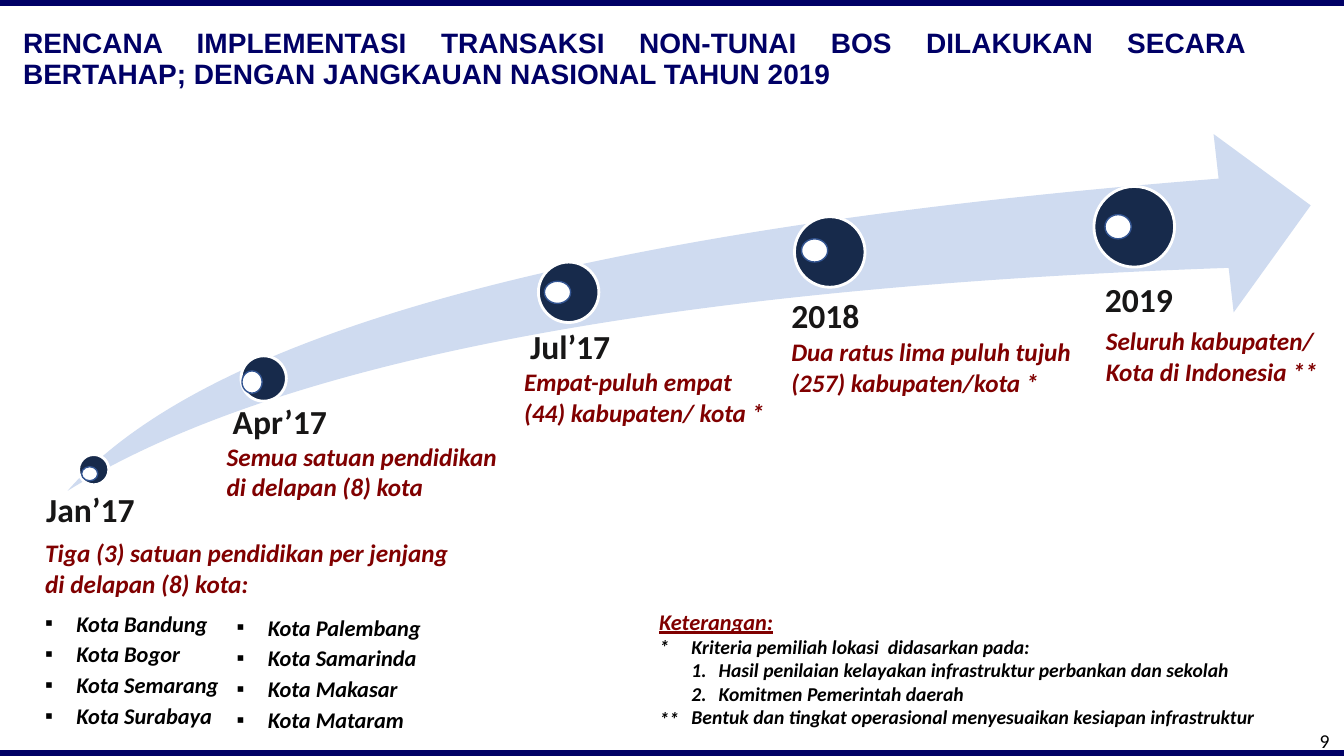
from dataclasses import dataclass, replace
from typing import Optional

from lxml.etree import SubElement
from pptx import Presentation
from pptx.dml.color import RGBColor
from pptx.enum.shapes import MSO_SHAPE as Shape
from pptx.enum.text import MSO_ANCHOR as Anchor, PP_ALIGN as Align
from pptx.oxml.ns import qn
from pptx.util import Inches, Pt

COLORS = {
    "navy": "000066",
    "arrow": "CFDBF0",
    "dot": "172A4B",
    "glint_line": "325491",
    "date": "171616",
    "maroon": "800000",
    "black": "000000",
    "white": "FFFFFF",
}

Box = tuple[float, float, float, float]  # left, top, width, height


@dataclass(frozen=True)
class Style:
    size: float
    color: str
    bold: bool = True
    italic: bool = False
    underline: bool = False
    font: str = "Calibri"
    align: Align = Align.LEFT
    spacing: Optional[float | Pt] = None
    before: float = 0
    margin: float = 0
    hanging: float = 0
    bullet: str = ""
    numbering: str = ""


@dataclass(frozen=True)
class Line:
    text: str
    style: Style


@dataclass(frozen=True)
class Milestone:
    date: str
    date_box: Box
    dot: Box
    glint: Box
    caption: tuple[str, ...]
    caption_box: Box
    cities: tuple[str, ...] = ()


TITLE = Style(20, "navy", font="Arial", align=Align.JUSTIFY, spacing=0.9)
PAGE = Style(14, "black", bold=False)
DATE = Style(24, "date")
CAPTION = Style(18, "maroon", italic=True, spacing=Pt(22))
CITY = Style(16, "black", italic=True, spacing=Pt(22),
             margin=0.31, hanging=0.31, bullet="▪")
NOTE_HEAD = Style(16, "maroon", italic=True, underline=True)
MARKER = Style(14, "black", italic=True)
NOTE = replace(MARKER, margin=0.32)
NUMBERED = replace(MARKER, margin=0.59, hanging=0.27, numbering="arabicPeriod")

MILESTONES = (
    Milestone("Jan’17", (0.36, 4.8, 1.2, 0.5),
              (0.78, 4.51, 0.3, 0.3), (0.81, 4.63, 0.16, 0.14),
              ("Tiga (3) satuan pendidikan per jenjang", "di delapan (8) kota:"),
              (0.35, 5.28, 4.32, 2.02),
              ("Kota Bandung", "Kota Bogor", "Kota Semarang", "Kota Surabaya")),
    Milestone("Apr’17", (2.21, 3.93, 1.25, 0.5),
              (2.39, 3.53, 0.45, 0.45), (2.4, 3.68, 0.2, 0.22),
              ("Semua satuan pendidikan", "di delapan (8) kota"),
              (2.15, 4.32, 2.97, 0.72)),
    Milestone("Jul’17", (5.16, 3.18, 1.1, 0.5),
              (5.34, 2.6, 0.6, 0.6), (5.4, 2.79, 0.26, 0.22),
              ("Empat-puluh empat (44) kabupaten/ kota *",),
              (5.1, 3.58, 2.71, 0.72)),
    Milestone("2018", (7.75, 2.88, 1, 0.5),
              (7.88, 2.15, 0.7, 0.7), (7.95, 2.37, 0.26, 0.23),
              ("Dua ratus lima puluh tujuh (257) kabupaten/kota *",),
              (7.75, 3.28, 3.1, 0.72)),
    Milestone("2019", (10.86, 2.72, 1, 0.59),
              (10.85, 1.85, 0.8, 0.8), (10.96, 2.13, 0.26, 0.24),
              ("Seluruh kabupaten/ Kota di Indonesia **",),
              (10.87, 3.17, 2.56, 0.72)),
)
MORE_CITIES = ("Kota Palembang", "Kota Samarinda", "Kota Makasar", "Kota Mataram")
NOTES = (
    Line("Keterangan:", NOTE_HEAD),
    Line("Kriteria pemiliah lokasi  didasarkan pada:", NOTE),
    Line("Hasil penilaian kelayakan infrastruktur perbankan dan sekolah", NUMBERED),
    Line("Komitmen Pemerintah daerah", NUMBERED),
    Line("Bentuk dan tingkat operasional menyesuaikan kesiapan infrastruktur", NOTE),
)


def color(name: str) -> RGBColor:
    return RGBColor.from_string(COLORS[name])


def add_shape(slide, kind: Shape, box: Box, fill: str,
              line: str = "", line_width: float = 1):
    shape = slide.shapes.add_shape(kind, *map(Inches, box))
    shape.shadow.inherit = False
    shape.fill.solid()
    shape.fill.fore_color.rgb = color(fill)
    if line:
        shape.line.color.rgb = color(line)
        shape.line.width = Pt(line_width)
    else:
        shape.line.fill.background()
    return shape


def format_paragraph(paragraph, style: Style) -> None:
    properties = paragraph._p.get_or_add_pPr()
    properties.set("marL", str(Inches(style.margin)))
    properties.set("indent", str(-Inches(style.hanging)))
    if style.bullet:
        SubElement(properties, qn("a:buFont"), typeface="Arial")
        SubElement(properties, qn("a:buChar"), char=style.bullet)
    if style.numbering:
        SubElement(properties, qn("a:buAutoNum"), type=style.numbering)
    paragraph.alignment = style.align
    paragraph.space_before = Pt(style.before)
    if style.spacing:
        paragraph.line_spacing = style.spacing
    font = paragraph.font
    font.name, font.size = style.font, Pt(style.size)
    font.bold, font.italic = style.bold, style.italic
    font.underline = style.underline
    font.color.rgb = color(style.color)


def add_text(slide, box: Box, *lines: Line, anchor: Anchor = Anchor.TOP) -> None:
    frame = slide.shapes.add_textbox(*map(Inches, box)).text_frame
    frame.word_wrap = True
    frame.vertical_anchor = anchor
    for index, line in enumerate(lines):
        paragraph = frame.add_paragraph() if index else frame.paragraphs[0]
        paragraph.text = line.text
        format_paragraph(paragraph, line.style)


def city_lines(cities: tuple[str, ...], before: float = 0) -> list[Line]:
    return [Line(city, replace(CITY, before=0 if index else before))
            for index, city in enumerate(cities)]


def add_milestone(slide, milestone: Milestone) -> None:
    add_shape(slide, Shape.OVAL, milestone.dot, "dot", "white", 2)
    add_shape(slide, Shape.OVAL, milestone.glint, "white", "glint_line")
    add_text(slide, milestone.date_box, Line(milestone.date, DATE))
    caption = [Line(text, CAPTION) for text in milestone.caption]
    add_text(slide, milestone.caption_box, *caption,
             *city_lines(milestone.cities, before=5))


def main() -> None:
    presentation = Presentation()
    presentation.slide_width = Inches(13.33)
    presentation.slide_height = Inches(7.5)
    slide = presentation.slides.add_slide(presentation.slide_layouts[6])

    # Frame bars, page number and title
    for top in (0, 7.45):
        add_shape(slide, Shape.RECTANGLE, (0, top, 13.33, 0.05), "navy", "navy")
    add_text(slide, (12.99, 7.18, 0.43, 0.34), Line("9", PAGE))
    add_text(slide, (0.13, 0.21, 12.32, 0.77),
             Line("RENCANA IMPLEMENTASI TRANSAKSI NON-TUNAI BOS DILAKUKAN SECARA "
                  "BERTAHAP; DENGAN JANGKAUAN NASIONAL TAHUN 2019", TITLE),
             anchor=Anchor.MIDDLE)

    # Rising arrow with its milestones
    arrow = add_shape(slide, Shape.SWOOSH_ARROW, (0.67, 1.33, 12.33, 3.54), "arrow")
    arrow.adjustments[0], arrow.adjustments[1] = 0.25, 0.258
    for milestone in MILESTONES:
        add_milestone(slide, milestone)
    add_text(slide, (2.25, 6, 2.06, 1.32), *city_lines(MORE_CITIES))

    # Notes and their markers
    add_text(slide, (6.44, 5.98, 6.24, 1.31), *NOTES)
    for marker, top in (("*", 6.25), ("**", 6.96)):
        add_text(slide, (6.44, top, 0.42, 0.34), Line(marker, MARKER))

    presentation.save("out.pptx")


if __name__ == "__main__":
    main()
